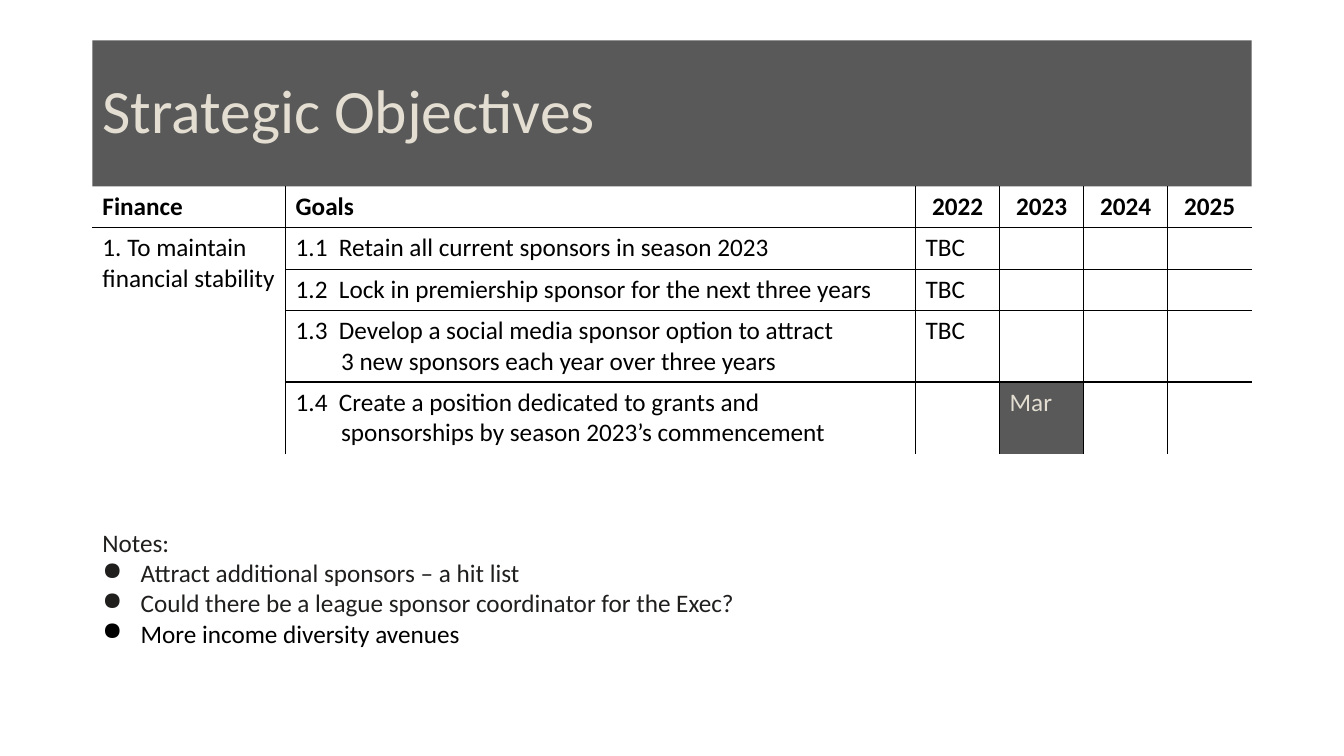
import pptx
import pptx.dml.color
import pptx.enum.shapes
import pptx.enum.text
import pptx.oxml.ns
import pptx.util
import lxml.etree

RGBColor = pptx.dml.color.RGBColor
CHARCOAL = RGBColor(0x59, 0x59, 0x59)
CREAM = RGBColor(0xE3, 0xDE, 0xD1)
BLACK = RGBColor(0x00, 0x00, 0x00)
INK = RGBColor(0x20, 0x1F, 0x1E)
ALIGN = pptx.enum.text.PP_ALIGN
qn = pptx.oxml.ns.qn

presentation = pptx.Presentation()
presentation.slide_width = pptx.util.Inches(13.33)
presentation.slide_height = pptx.util.Inches(7.5)
slide = presentation.slides.add_slide(presentation.slide_layouts[6])

# Grid: 160 columns by 150 rows
COLUMN = presentation.slide_width / 160
ROW = presentation.slide_height / 150
LEFT, WIDTH = 11, 138
TITLE_TOP, TITLE_HEIGHT = 8, 29


def place(column, row, columns, rows):
    return [round(length) for length in (column * COLUMN, row * ROW, columns * COLUMN, rows * ROW)]


def write(paragraph, text, color, size=18, bold=False, **paragraph_format):
    run = paragraph.add_run()
    run.text = text
    run.font.color.rgb = color
    font_format = {"name": "Calibri", "size": pptx.util.Pt(size), "bold": bold}
    for target, values in ((run.font, font_format), (paragraph, paragraph_format)):
        for name, value in values.items():
            setattr(target, name, value)


# Title band
band = slide.shapes.add_shape(
    pptx.enum.shapes.MSO_SHAPE.RECTANGLE, *place(LEFT, TITLE_TOP, WIDTH, TITLE_HEIGHT))
band.shadow.inherit = False
band.fill.solid()
band.fill.fore_color.rgb = CHARCOAL
band.line.fill.background()
band.text_frame.word_wrap = True
band.text_frame.vertical_anchor = pptx.enum.text.MSO_ANCHOR.MIDDLE
write(band.text_frame.paragraphs[0], "Strategic Objectives", CREAM, size=44,
      alignment=ALIGN.LEFT, line_spacing=0.9)

# Objectives table
objectives = [
    ["Finance", "Goals", "2022", "2023", "2024", "2025"],
    ["1. To maintain financial stability",
     "1.1  Retain all current sponsors in season 2023", "TBC", "", "", ""],
    ["", "1.2  Lock in premiership sponsor for the next three years", "TBC", "", "", ""],
    ["", "1.3  Develop a social media sponsor option to attract\n"
         "3 new sponsors each year over three years", "TBC", "", "", ""],
    ["", "1.4  Create a position dedicated to grants and\n"
         "sponsorships by season 2023’s commencement", "", "Mar", "", ""],
]
column_spans = [23, 75, 10, 10, 10, 10]
row_spans = [8.2, 8.2, 8.2, 14.2, 14.2]
last_row, last_column = len(row_spans) - 1, len(column_spans) - 1

table = slide.shapes.add_table(
    len(row_spans), len(column_spans),
    *place(LEFT, TITLE_TOP + TITLE_HEIGHT, WIDTH, sum(row_spans))).table
table.first_row = table.horz_banding = False
style = table._tbl.tblPr.find(qn("a:tableStyleId"))
style.text = "{2D5ABB26-0587-4C30-8999-92F81FD0307C}"
for table_column, span in zip(table.columns, column_spans):
    table_column.width = round(span * COLUMN)
for table_row, span in zip(table.rows, row_spans):
    table_row.height = round(span * ROW)
table.cell(1, 0).merge(table.cell(last_row, 0))

for r, texts in enumerate(objectives):
    for c, text in enumerate(texts):
        cell = table.cell(r, c)
        properties = cell._tc.get_or_add_tcPr()

        # Rules run only between cells, never along the outer edge
        inner_edges = {
            "a:lnL": c > 0,
            "a:lnR": c < last_column,
            "a:lnT": r == 1 or (r > 1 and c > 0),
            "a:lnB": r == 0 or (r < last_row and c > 0),
        }
        for edge, visible in inner_edges.items():
            line = lxml.etree.SubElement(properties, qn(edge), w=str(pptx.util.Pt(1)))
            if visible:
                fill = lxml.etree.SubElement(line, qn("a:solidFill"))
                lxml.etree.SubElement(fill, qn("a:srgbClr"), val=str(BLACK))
            else:
                lxml.etree.SubElement(line, qn("a:noFill"))

        scheduled = text == "Mar"
        if scheduled:
            cell.fill.solid()
            cell.fill.fore_color.rgb = CHARCOAL
        else:
            cell.fill.background()

        for i, part in enumerate(text.split("\n") if text else []):
            paragraph = cell.text_frame.add_paragraph() if i else cell.text_frame.paragraphs[0]
            write(paragraph, part, CREAM if scheduled else BLACK, bold=r == 0,
                  alignment=ALIGN.CENTER if r == 0 and c > 1 else ALIGN.LEFT)
            if i:
                paragraph._p.get_or_add_pPr().set("marL", str(pptx.util.Inches(0.45)))

# Notes
notes = slide.shapes.add_textbox(*place(LEFT, 103.6, 101, 26.2)).text_frame
notes.word_wrap = True
write(notes.paragraphs[0], "Notes:", INK)
for text, color in [
    ("Attract additional sponsors – a hit list", INK),
    ("Could there be a league sponsor coordinator for the Exec?", INK),
    ("More income diversity avenues", BLACK),
]:
    paragraph = notes.add_paragraph()
    write(paragraph, text, color)
    properties = paragraph._p.get_or_add_pPr()
    indent = pptx.util.Inches(0.38)
    properties.set("marL", str(indent))
    properties.set("indent", str(-indent))
    lxml.etree.SubElement(properties, qn("a:buChar"), char="●")

presentation.save("out.pptx")
